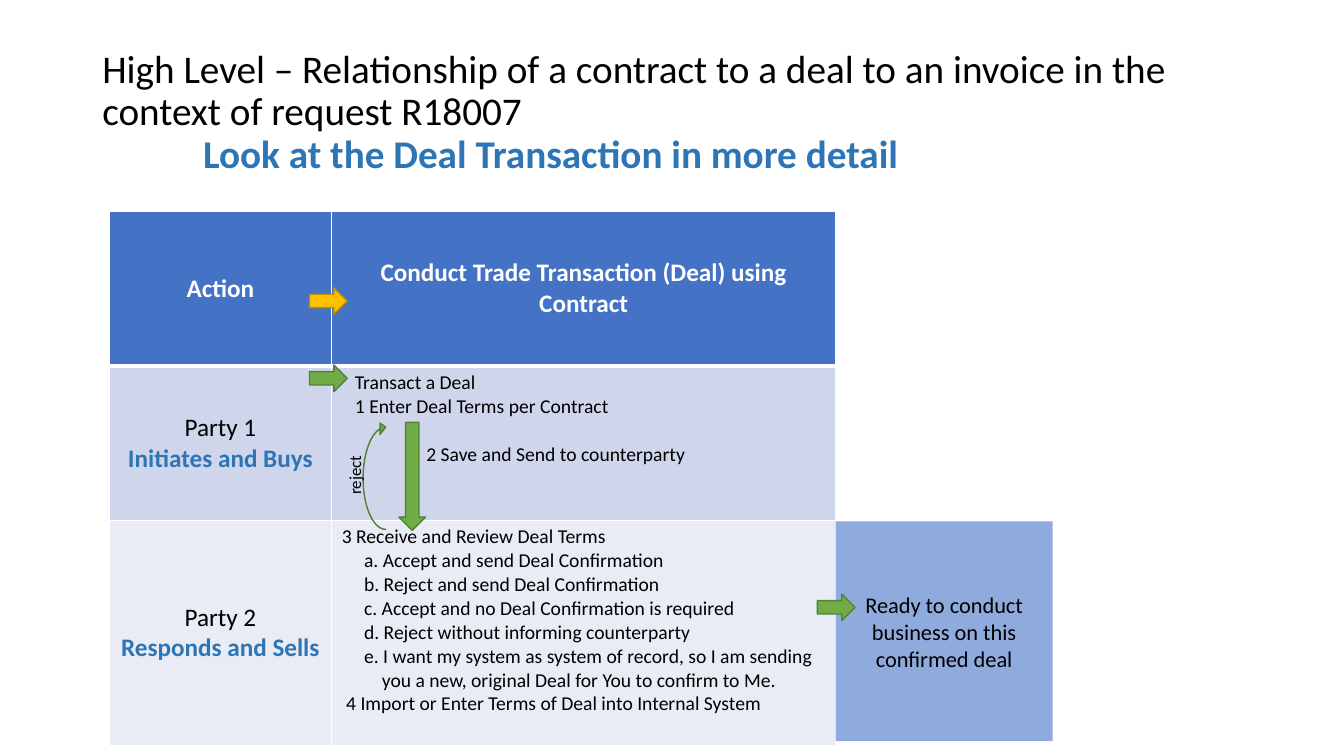
from lxml import etree
from pptx import Presentation
from pptx import util as u
from pptx.dml import color
from pptx.enum import shapes, text
from pptx.oxml import ns

COLOURS = {
    "black": "000000", "white": "FFFFFF", "accent": "2E75B6",
    "header": "4472C4", "party1": "CFD5EA", "party2": "E9EBF5",
    "ready": "8FAADC", "green": "70AD47", "green_edge": "538035",
    "gold": "FFC000", "gold_edge": "BD8E00",
}
MIDDLE = text.MSO_ANCHOR.MIDDLE
TOP = text.MSO_ANCHOR.TOP
CENTRE = text.PP_ALIGN.CENTER
LEFT = text.PP_ALIGN.LEFT
RIGHT_ARROW = shapes.MSO_SHAPE.RIGHT_ARROW


def rgb(name):
    return color.RGBColor.from_string(COLOURS[name])


def place(left, top, width, height):
    return [u.Cm(length) for length in (left, top, width, height)]


def write(frame, content, size=18, colour="black", bold=False, align=LEFT,
          indent=0.0, hanging=0.0, before=0, spacing=1.0):
    """Add one paragraph, using the empty first one if it is still free."""
    first = frame.paragraphs[0]
    paragraph = frame.add_paragraph() if first.runs else first
    paragraph.alignment = align
    paragraph.line_spacing = spacing
    paragraph.space_before = u.Pt(before)
    properties = paragraph._p.get_or_add_pPr()
    properties.set("marL", str(u.Cm(indent + hanging)))
    properties.set("indent", str(u.Cm(-hanging)))
    run = paragraph.add_run()
    run.text = content
    run.font.name = "Calibri"
    run.font.size = u.Pt(size)
    run.font.bold = bold
    run.font.color.rgb = rgb(colour)


def add_label(slide, box, anchor=TOP, rotation=0):
    label = slide.shapes.add_textbox(*place(*box))
    label.rotation = rotation
    label.text_frame.word_wrap = True
    label.text_frame.vertical_anchor = anchor
    return label.text_frame


def add_block(slide, kind, box, fill, edge=None, rotation=0):
    block = slide.shapes.add_shape(kind, *place(*box))
    block.shadow.inherit = False
    block.rotation = rotation
    block.fill.solid()
    block.fill.fore_color.rgb = rgb(fill)
    if edge:
        block.line.color.rgb = rgb(edge)
        block.line.width = u.Pt(1)
    else:
        block.line.fill.background()
    return block


def style_cell(cell, fill, anchor=MIDDLE, top=1, bottom=1):
    """White borders first, then the fill, as the schema orders them."""
    properties = cell._tc.get_or_add_tcPr()
    for side, width in (("L", 1), ("R", 1), ("T", top), ("B", bottom)):
        border = etree.SubElement(properties, ns.qn("a:ln" + side), w=str(u.Pt(width)))
        solid = etree.SubElement(border, ns.qn("a:solidFill"))
        etree.SubElement(solid, ns.qn("a:srgbClr"), val=COLOURS["white"])
    cell.fill.solid()
    cell.fill.fore_color.rgb = rgb(fill)
    cell.vertical_anchor = anchor
    return cell.text_frame


def add_title(slide):
    title = add_label(slide, (2.33, 1.01, 29.21, 3.68), MIDDLE)
    write(title, "High Level – Relationship of a contract to a deal to an invoice "
          "in the context of request R18007", size=28, spacing=0.9)
    write(title, "Look at the Deal Transaction in more detail", size=28,
          colour="accent", bold=True, indent=2.54, spacing=0.9)


def add_deal_table(slide):
    widths, heights = (5.61, 12.7), (3.89, 3.89, 5.67)
    deal = slide.shapes.add_table(
        3, 2, *place(2.75, 5.33, sum(widths), sum(heights))).table
    for column, width in zip(deal.columns, widths):
        column.width = u.Cm(width)
    for row, height in zip(deal.rows, heights):
        row.height = u.Cm(height)

    # Header
    for column, heading in enumerate(
            ("Action", "Conduct Trade Transaction (Deal) using Contract")):
        write(style_cell(deal.cell(0, column), "header", bottom=3), heading,
              colour="white", bold=True, align=CENTRE)

    # Parties and their steps: text, indent, hanging indent, space before
    parties = (
        ("Party 1", "Initiates and Buys", "party1", (
            ("Transact a Deal", 0.33, 0, 0),
            ("1 Enter Deal Terms per Contract", 0.33, 0, 0),
            ("2 Save and Send to counterparty", 2.13, 0, 17),
        )),
        ("Party 2", "Responds and Sells", "party2", (
            ("3 Receive and Review Deal Terms", 0, 0, 0),
            ("a. Accept and send Deal Confirmation", 0.56, 0.45, 0),
            ("b. Reject and send Deal Confirmation", 0.56, 0.45, 0),
            ("c. Accept and no Deal Confirmation is required", 0.56, 0.45, 0),
            ("d. Reject without informing counterparty", 0.56, 0.45, 0),
            ("e. I want my system as system of record, so I am sending "
             "you a new, original Deal for You to confirm to Me.", 0.56, 0.45, 0),
            ("4 Import or Enter Terms of Deal into Internal System", 0.11, 0, 0),
        )),
    )
    for row, (party, role, fill, steps) in enumerate(parties, start=1):
        top = 3 if row == 1 else 1
        party_frame = style_cell(deal.cell(row, 0), fill, top=top)
        write(party_frame, party, align=CENTRE)
        write(party_frame, role, colour="accent", bold=True, align=CENTRE)
        steps_frame = style_cell(deal.cell(row, 1), fill, TOP, top=top)
        for step, indent, hanging, before in steps:
            write(steps_frame, step, size=14, indent=indent,
                  hanging=hanging, before=before)


def main():
    deck = Presentation()
    deck.slide_width, deck.slide_height = u.Cm(33.87), u.Cm(19.05)
    slide = deck.slides.add_slide(deck.slide_layouts[6])
    add_title(slide)
    add_deal_table(slide)

    # Outcome
    ready = add_block(slide, shapes.MSO_SHAPE.RECTANGLE,
                      (21.06, 13.14, 5.47, 5.54), "ready").text_frame
    ready.word_wrap = True
    ready.vertical_anchor = MIDDLE
    write(ready, "Ready to conduct business on this confirmed deal",
          size=16, align=CENTRE)

    # Short arrows into each stage
    for left, top, hue in ((7.8, 7.25, "gold"), (7.8, 9.2, "green"),
                           (20.6, 14.97, "green")):
        add_block(slide, RIGHT_ARROW, (left, top, 0.95, 0.67), hue, hue + "_edge")

    # Send and reject loop
    add_block(slide, RIGHT_ARROW, (9.03, 11.67, 2.72, 0.67),
              "green", "green_edge", rotation=90)
    reject = add_block(slide, shapes.MSO_SHAPE.CURVED_LEFT_ARROW,
                       (9.15, 10.62, 0.57, 2.72), "green", "green_edge", rotation=180)
    for index, value in enumerate((0, 0.5, 0.25)):
        reject.adjustments[index] = value
    write(add_label(slide, (7.58, 10.97, 2.72, 0.77), rotation=270), "reject", size=12)

    deck.save("out.pptx")


if __name__ == "__main__":
    main()
